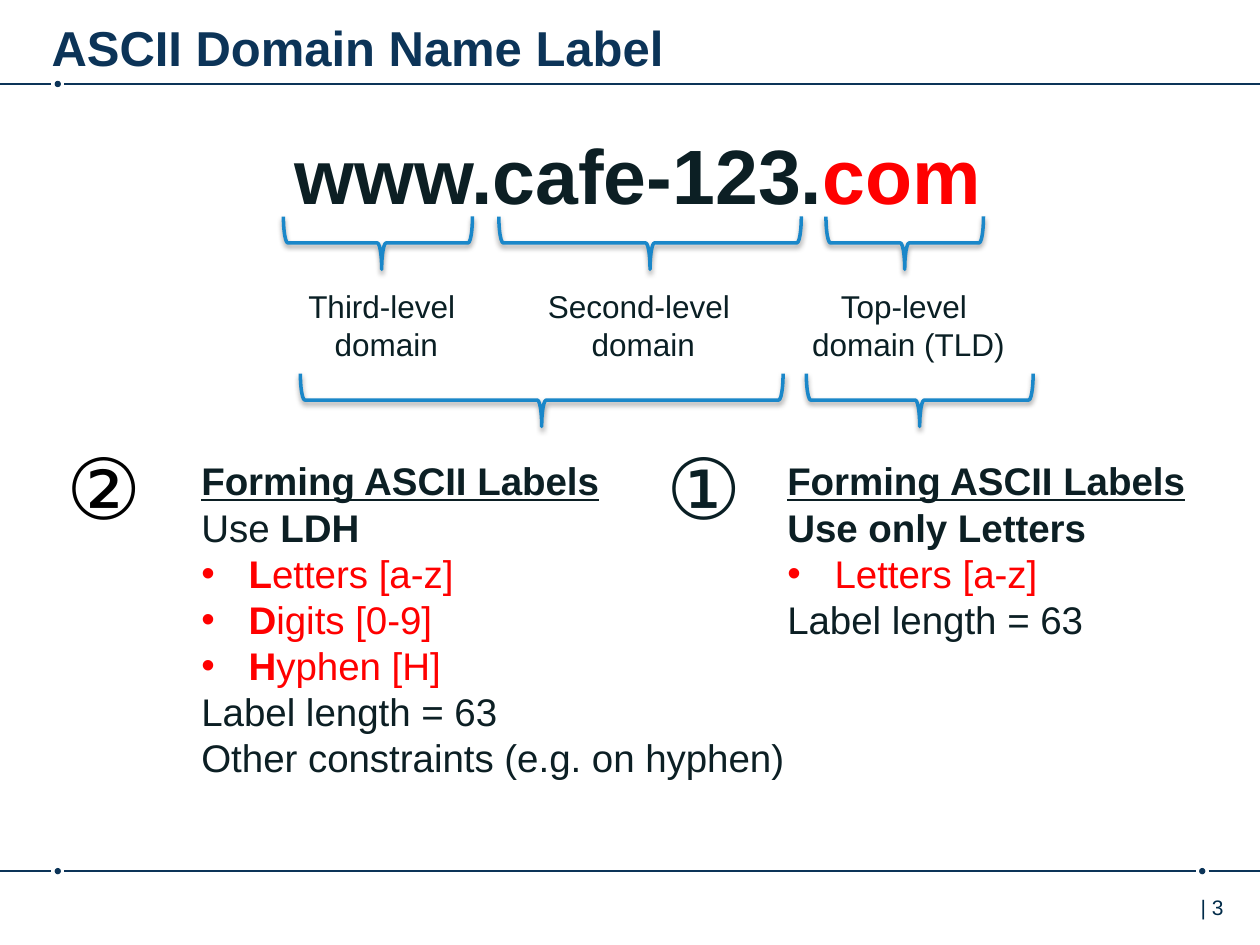
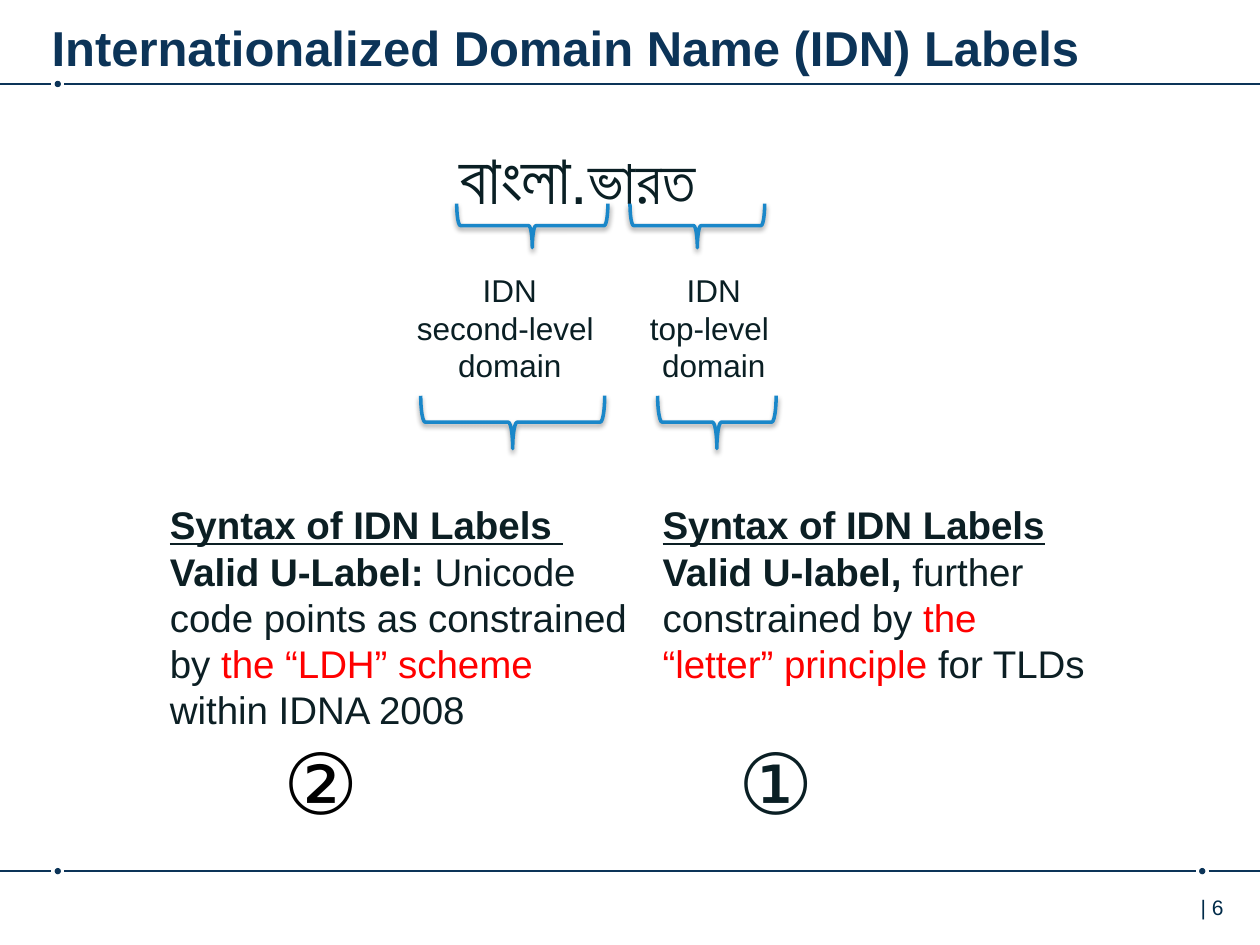
"""Build two slides on the labels of ASCII and internationalized domain names."""
from dataclasses import dataclass

import pptx
import pptx.dml.color
import pptx.enum.shapes
import pptx.enum.text
import pptx.oxml
import pptx.oxml.ns
import pptx.util

Pt = pptx.util.Pt
Align = pptx.enum.text.PP_ALIGN
Shape = pptx.enum.shapes.MSO_SHAPE


@dataclass(frozen=True)
class Theme:
    font: str = "Arial"
    navy: str = "0C3458"
    number: str = "002B49"
    ink: str = "0C1F24"
    label: str = "0A1F24"
    black: str = "000000"
    accent: str = "FF0000"
    brace: str = "1A87C9"
    title_size: float = 28
    number_size: float = 12
    host_size: float = 44
    script_size: float = 40
    script_end_size: float = 36
    label_size: float = 18
    body_size: float = 22
    step_size: float = 48
    inset: tuple = (7.2, 3.6, 7.2, 3.6)


class Deck:
    def __init__(self, theme):
        self.theme = theme
        self.file = pptx.Presentation()
        self.file.slide_width, self.file.slide_height = Pt(720), Pt(540)
        self.slide = None

    def color(self, value):
        return pptx.dml.color.RGBColor.from_string(value)

    def element(self, parent, tag, **attributes):
        child = pptx.oxml.parse_xml(f"<a:{tag} {pptx.oxml.ns.nsdecls('a')}/>")
        for key, value in attributes.items():
            child.set(key, str(value))
        parent.append(child)
        return child

    def start(self, title, number):
        theme = self.theme
        self.slide = self.file.slides.add_slide(self.file.slide_layouts[6])
        self.rule(48, [33])
        self.rule(497.8, [33, 687])
        self.text(29.5, 3.6, 630.7, 35.3, [[(title, "b")]], theme.title_size,
                  theme.navy, inset=(0, 6.5, 0, 3.6), grow=False)
        self.text(668.9, 507.6, 62.6, 28.8, [[(f"| {number}", "")]], theme.number_size,
                  theme.number, inset=(17.2, 3.6, 7.2, 3.6), grow=False)

    def rule(self, y, dots, gap=3.7, size=3.6):
        starts = [0] + [dot + gap for dot in dots]
        ends = [dot - gap for dot in dots] + [720]
        for start, end in zip(starts, ends):
            line = self.slide.shapes.add_connector(
                pptx.enum.shapes.MSO_CONNECTOR.STRAIGHT, Pt(start), Pt(y), Pt(end), Pt(y))
            line.line.color.rgb = self.color(self.theme.navy)
            line.line.width = Pt(1)
            self.element(line._element.spPr, "effectLst")
        for center in dots:
            dot = self.slide.shapes.add_shape(
                Shape.OVAL, Pt(center - size / 2), Pt(y - size / 2), Pt(size), Pt(size))
            dot.shadow.inherit = False
            dot.fill.solid()
            dot.fill.fore_color.rgb = self.color(self.theme.navy)
            dot.line.fill.background()

    def brace(self, x, y, span, depth=30.2, tip=0.5):
        brace = self.slide.shapes.add_shape(
            Shape.LEFT_BRACE, Pt(x - depth / 2), Pt(y - span / 2), Pt(depth), Pt(span))
        brace.rotation = 270
        brace.adjustments[0], brace.adjustments[1] = 0.0833, tip
        brace.fill.background()
        brace.line.color.rgb = self.color(self.theme.brace)
        brace.line.width = Pt(2)
        brace.shadow.inherit = False
        effects = brace._element.spPr.find(pptx.oxml.ns.qn("a:effectLst"))
        shadow = self.element(effects, "outerShdw", blurRad=Pt(3.1), dist=Pt(1.6),
                              dir=90 * 60000, rotWithShape=0)
        tone = self.element(shadow, "srgbClr", val=self.theme.black)
        self.element(tone, "alpha", val=38000)

    def text(self, left, top, width, height, paragraphs, size, color,
             align=Align.LEFT, wrap=True, inset=None, grow=True):
        """Write paragraphs of (text, marks[, size]); marks are b, u, r (accent) and * (bullet)."""
        box = self.slide.shapes.add_textbox(Pt(left), Pt(top), Pt(width), Pt(height))
        frame = box.text_frame
        frame.word_wrap = wrap
        if grow:
            frame.auto_size = pptx.enum.text.MSO_AUTO_SIZE.SHAPE_TO_FIT_TEXT
        (frame.margin_left, frame.margin_top, frame.margin_right,
         frame.margin_bottom) = map(Pt, inset or self.theme.inset)
        for index, pieces in enumerate(paragraphs):
            paragraph = frame.add_paragraph() if index else frame.paragraphs[0]
            paragraph.alignment = align
            if "*" in pieces[0][1]:
                properties = paragraph._p.get_or_add_pPr()
                properties.set("marL", str(Pt(27)))
                properties.set("indent", str(Pt(-27)))
                self.element(properties, "buFont", typeface=self.theme.font)
                self.element(properties, "buChar", char="•")
            for words, marks, *own_size in pieces:
                run = paragraph.add_run()
                run.text = words
                run.font.name = self.theme.font
                run.font.size = Pt(own_size[0] if own_size else size)
                run.font.bold = "b" in marks
                run.font.underline = "u" in marks
                run.font.color.rgb = self.color(self.theme.accent if "r" in marks else color)

    def label(self, left, top, width, height, lines, wrap=False):
        self.text(left, top, width, height, [[(line, "")] for line in lines],
                  self.theme.label_size, self.theme.label, Align.CENTER, wrap)

    def body(self, left, top, width, height, paragraphs):
        self.text(left, top, width, height, paragraphs, self.theme.body_size, self.theme.ink)

    def steps(self, first, second):
        self.text(*first, 58.3, 58.3, [[("①", "")]], self.theme.step_size,
                  self.theme.label, wrap=False, inset=(0, 0, 0, 0))
        self.text(*second, 72.7, 65.5, [[("②", "")]], self.theme.step_size,
                  self.theme.black, wrap=False)


def ascii_labels(deck):
    theme = deck.theme
    deck.start("ASCII Domain Name Label", 3)
    deck.text(161.3, 69.1, 410.4, 60.5, [[("www.cafe-123.", "b"), ("com", "br")]],
              theme.host_size, theme.ink, wrap=False)
    for x, span, tip in [(216, 108, 0.52), (371.5, 172.8, 0.5), (517, 90, 0.5)]:
        deck.brace(x, 138.8, span, tip=tip)
    deck.label(168.5, 160.6, 104.4, 51.1, ["Third-level ", "domain"])
    deck.label(305.3, 160.6, 124.6, 51.1, ["Second-level ", "domain"])
    deck.label(454.3, 160.6, 129.6, 51.1, ["Top-level ", "domain (TLD)"], wrap=True)
    deck.brace(309.6, 228.6, 275.8)
    deck.brace(525.6, 228.6, 129.6)
    heading = [("Forming ASCII Labels", "bu")]
    length = [("Label length = 63", "")]
    ldh = [("L", "etters [a-z]"), ("D", "igits [0-9]"), ("H", "yphen [H]")]
    deck.body(108, 257.8, 349.9, 193.7, [
        heading,
        [("Use", ""), (" LDH", "b")],
        *[[(initial, "br*"), (rest, "r")] for initial, rest in ldh],
        length,
        [("Other constraints (e.g. on hyphen)", "")]])
    deck.body(442.8, 257.8, 253.4, 113.8, [
        heading,
        [("Use only Letters", "b")],
        [("Letters [a-z]", "r*")],
        length])
    deck.steps((380.9, 249.1), (31, 245.5))


def idn_labels(deck):
    theme = deck.theme
    deck.start("Internationalized Domain Name (IDN) Labels", 6)
    deck.text(255.6, 73.4, 190.1, 55.4,
              [[("বাংলা", ""), (".ভারত", "", theme.script_end_size)]],
              theme.script_size, theme.label, wrap=False)
    deck.brace(304.2, 128.9, 86.4, depth=25.2)
    deck.brace(398.5, 128.9, 77, depth=25.2)
    deck.label(230.4, 151.2, 121.7, 72.7, ["IDN", "second-level ", "domain"])
    deck.label(347, 151.2, 121.7, 72.7, ["IDN", "top-level ", "domain"], wrap=True)
    deck.brace(293, 241.2, 105.1)
    deck.brace(409.7, 241.2, 67.7)
    deck.body(90, 283, 275.8, 140.4, [
        [("Syntax of IDN Labels ", "bu")],
        [("Valid U-Label: ", "b"), ("Unicode code points as constrained by ", ""),
         ("the “LDH” scheme", "r"), (" within IDNA 2008", "")]])
    deck.body(371.5, 283, 260.6, 113.8, [
        [("Syntax of IDN Labels", "bu")],
        [("Valid U-label, ", "b"), ("further constrained by ", ""),
         ("the “letter” principle ", "r"), ("for TLDs", "")]])
    deck.steps((421.9, 417.6), (154.8, 414))


def main():
    deck = Deck(Theme())
    ascii_labels(deck)
    idn_labels(deck)
    deck.file.save("out.pptx")


if __name__ == "__main__":
    main()
